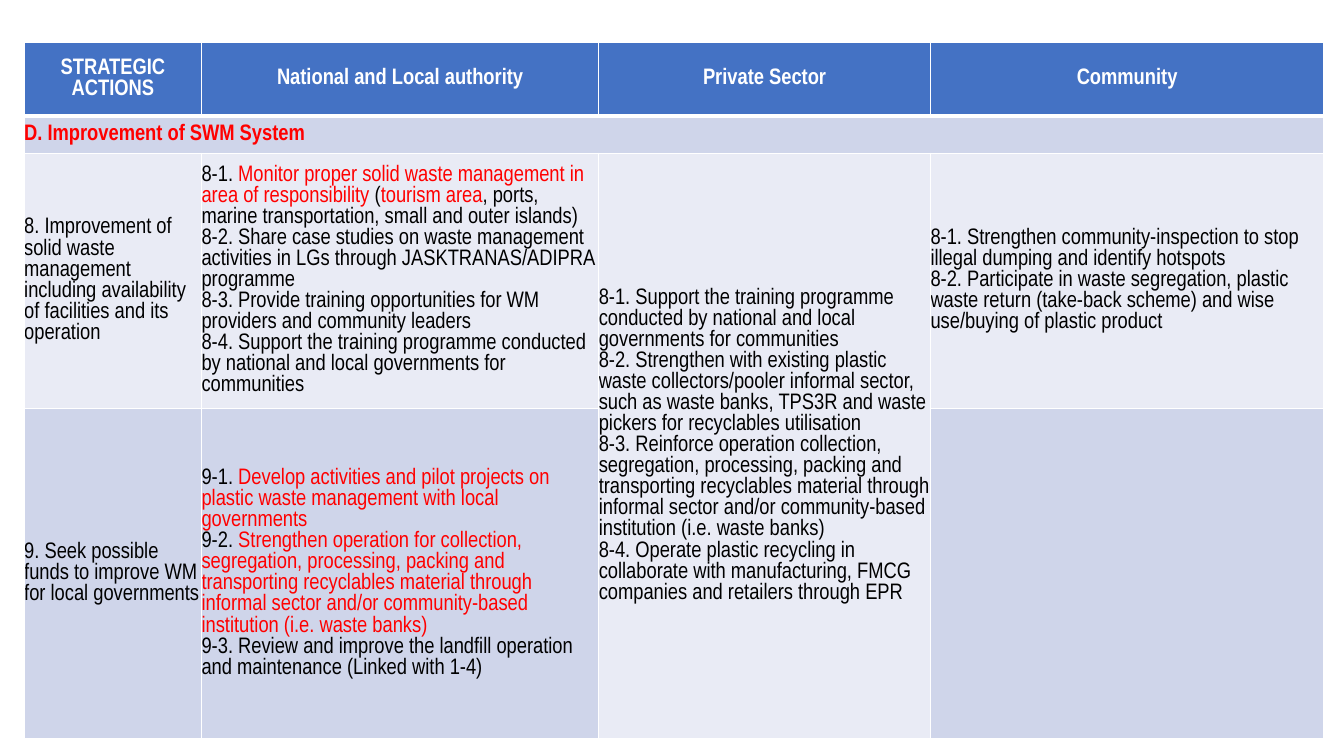
from lxml.etree import SubElement
from pptx import Presentation
from pptx.dml.color import RGBColor
from pptx.enum.text import MSO_ANCHOR, PP_ALIGN
from pptx.oxml.ns import qn
from pptx.util import Cm, Pt

HEADERS = ["STRATEGIC ACTIONS", "National and Local authority", "Private Sector", "Community"]
SECTION = "|D. Improvement of SWM System"

# Text between bars is red.
FACILITIES = [
    ["8. Improvement of solid waste management including availability of facilities and its operation"],
    [
        "8-1. |Monitor proper solid waste management in area of responsibility |(|tourism area|"
        ", ports, marine transportation, small and outer islands)",
        "8-2. Share case studies on waste management activities in LGs through JASKTRANAS/ADIPRA programme",
        "8-3. Provide training opportunities for WM providers and community leaders",
        "8-4. Support the training programme conducted by national and local governments for communities",
    ],
    [
        "8-1. Support the training programme conducted by national and local governments for communities",
        "8-2. Strengthen with existing plastic waste collectors/pooler informal sector, "
        "such as waste banks, TPS3R and waste pickers for recyclables utilisation",
        "8-3. Reinforce operation collection, segregation, processing, packing and transporting recyclables "
        "material through informal sector and/or community-based institution (i.e. waste banks)",
        "8-4. Operate plastic recycling in collaborate with manufacturing, "
        "FMCG companies and retailers through EPR",
    ],
    [
        "8-1. Strengthen community-inspection to stop illegal dumping and identify hotspots",
        "8-2. Participate in waste segregation, plastic waste return (take-back scheme) "
        "and wise use/buying of plastic product",
    ],
]
FUNDS = [
    ["9. Seek possible funds to improve WM for local governments"],
    [
        "9-1. |Develop activities and pilot projects on plastic waste management with local governments",
        "9-2. |Strengthen operation for collection, segregation, processing, packing and transporting recyclables "
        "material through informal sector and/or community-based institution (i.e. waste banks)",
        "9-3. Review and improve the landfill operation and maintenance (Linked with 1-4)",
    ],
    [],
    [],
]
ROWS = [[[header] for header in HEADERS], [[SECTION], [], [], []], FACILITIES, FUNDS]
ROW_FILLS = ["4472C4", "CFD5EA", "E9EBF5", "CFD5EA"]
COLUMN_WIDTHS = [4.47, 10.01, 8.36, 9.91]
ROW_HEIGHTS = [1.85, 0.94, 6.43, 8.33]
LEFT, TOP = 0.61, 1.07
FONT, FONT_SIZE = "Arial Narrow", 16
WHITE, BLACK, RED = "FFFFFF", "000000", "FF0000"


def color(value):
    return RGBColor.from_string(value)


def set_borders(cell, row_index):
    properties = cell._tc.get_or_add_tcPr()
    widths = {
        "a:lnL": 1,
        "a:lnR": 1,
        "a:lnT": 3 if row_index == 1 else 1,
        "a:lnB": 3 if row_index == 0 else 1,
    }
    for tag, width in widths.items():
        line = SubElement(properties, qn(tag), w=str(Pt(width)))
        fill = SubElement(line, qn("a:solidFill"))
        SubElement(fill, qn("a:srgbClr"), val=WHITE)


def write_paragraph(paragraph, text, is_header, is_bold):
    paragraph.alignment = PP_ALIGN.CENTER if is_header else PP_ALIGN.LEFT
    for index, piece in enumerate(text.split("|")):
        if not piece:
            continue
        run = paragraph.add_run()
        run.text = piece
        run.font.name = FONT
        run.font.size = Pt(FONT_SIZE)
        run.font.bold = is_bold
        run.font.color.rgb = color(RED if index % 2 else WHITE if is_header else BLACK)


def fill_cell(cell, row_index, texts):
    cell.margin_left = cell.margin_right = cell.margin_top = cell.margin_bottom = 0
    cell.vertical_anchor = MSO_ANCHOR.MIDDLE
    set_borders(cell, row_index)
    cell.fill.solid()
    cell.fill.fore_color.rgb = color(ROW_FILLS[row_index])
    text_frame = cell.text_frame
    for index, text in enumerate(texts):
        paragraph = text_frame.add_paragraph() if index else text_frame.paragraphs[0]
        write_paragraph(paragraph, text, row_index == 0, row_index < 2)


def main():
    presentation = Presentation()
    presentation.slide_width, presentation.slide_height = Cm(33.87), Cm(19.05)
    slide = presentation.slides.add_slide(presentation.slide_layouts[6])
    table = slide.shapes.add_table(
        len(ROW_HEIGHTS), len(COLUMN_WIDTHS), Cm(LEFT), Cm(TOP),
        Cm(sum(COLUMN_WIDTHS)), Cm(sum(ROW_HEIGHTS)),
    ).table
    for column, width in zip(table.columns, COLUMN_WIDTHS):
        column.width = Cm(width)
    for row, height in zip(table.rows, ROW_HEIGHTS):
        row.height = Cm(height)
    table.cell(1, 0).merge(table.cell(1, 3))
    table.cell(2, 2).merge(table.cell(3, 2))
    for row_index, row in enumerate(ROWS):
        for column_index, texts in enumerate(row):
            fill_cell(table.cell(row_index, column_index), row_index, texts)
    presentation.save("out.pptx")


if __name__ == "__main__":
    main()
